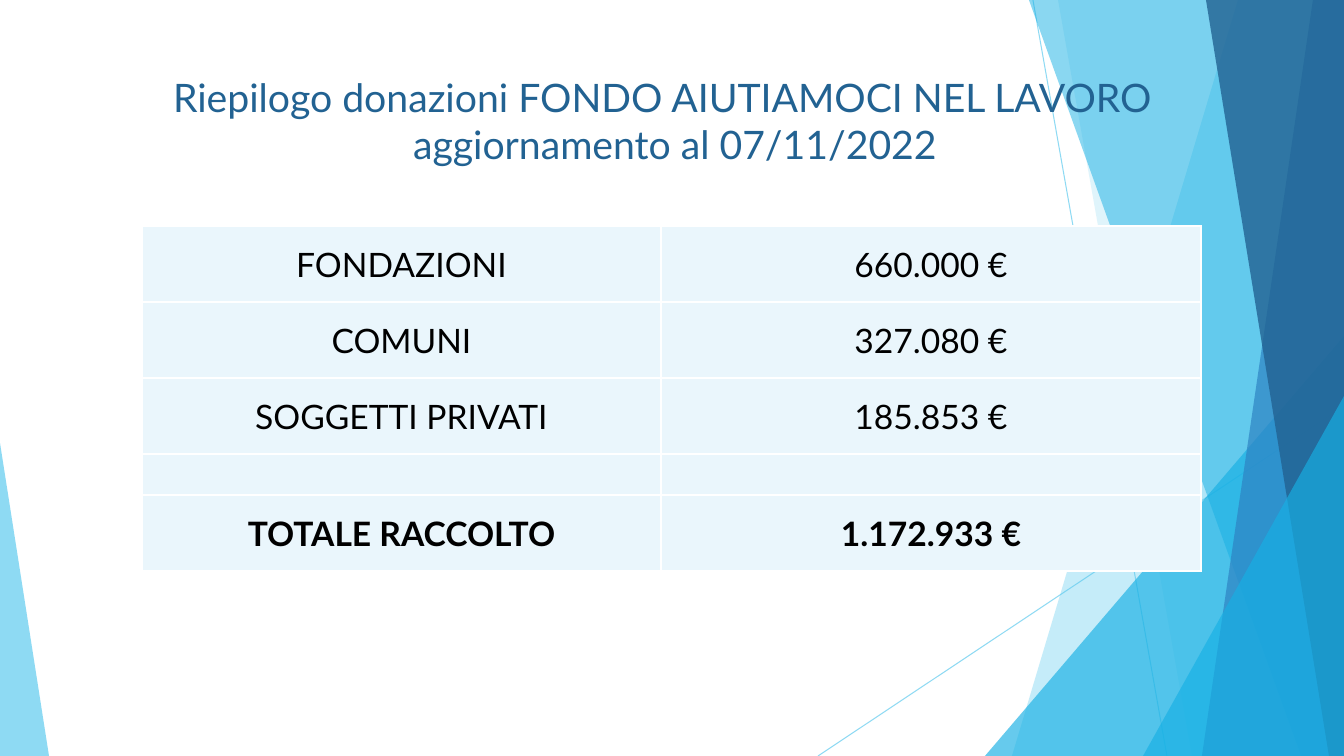
import pptx
import pptx.util
import pptx.dml.color
import pptx.enum.shapes
import pptx.enum.text
import pptx.oxml
import pptx.oxml.ns

RGB = pptx.dml.color.RGBColor
SKY = RGB(0x5F, 0xCB, 0xEF)
CYAN = RGB(0x17, 0xB0, 0xE4)
BLUE = RGB(0x2E, 0x83, 0xC3)
NAVY = RGB(0x22, 0x62, 0x92)
PALE = RGB(0xEA, 0xF6, 0xFC)
WHITE = RGB(0xFF, 0xFF, 0xFF)
BLACK = RGB(0x00, 0x00, 0x00)
WIDTH, HEIGHT = 1344, 756
EMU_PER_PX = 914400 / 100.8
FONT = "Lato"


def px(n):
    return pptx.util.Emu(round(n * EMU_PER_PX))


class Deck:
    def __init__(self):
        self.prs = pptx.Presentation()
        self.prs.slide_width, self.prs.slide_height = px(WIDTH), px(HEIGHT)
        self.s = self.prs.slides.add_slide(self.prs.slide_layouts[5])

    def opacity(self, fill, percent):
        clr = fill._xPr.find(".//" + pptx.oxml.ns.qn("a:srgbClr"))
        alpha = pptx.oxml.parse_xml(
            f'<a:alpha {pptx.oxml.ns.nsdecls("a")} val="{percent * 1000}"/>')
        clr.append(alpha)

    def paint(self, sp, color, percent):
        sp.shadow.inherit = False
        sp.fill.solid()
        sp.fill.fore_color.rgb = color
        self.opacity(sp.fill, percent)
        sp.line.fill.background()

    def line(self, x1, y1, x2, y2):
        c = self.s.shapes.add_connector(
            pptx.enum.shapes.MSO_CONNECTOR.STRAIGHT, px(x1), px(y1), px(x2), px(y2))
        c.line.color.rgb = SKY
        c.line.width = pptx.util.Pt(0.75)
        self.opacity(c.line.fill, 70)
        c._element.spPr.append(pptx.oxml.parse_xml(
            f'<a:effectLst {pptx.oxml.ns.nsdecls("a")}/>'))

    def band(self, top_x, bottom_x, color, percent):
        """Full-height band from a slanted left edge to the slide's right edge."""
        fb = self.s.shapes.build_freeform(top_x, 0, scale=EMU_PER_PX)
        fb.add_line_segments([(WIDTH, 0), (WIDTH, HEIGHT), (bottom_x, HEIGHT)], close=True)
        self.paint(fb.convert_to_shape(), color, percent)

    def corner(self, x, y, w, apex, color, percent):
        """Triangle standing on the slide's bottom edge."""
        sp = self.s.shapes.add_shape(
            pptx.enum.shapes.MSO_SHAPE.ISOSCELES_TRIANGLE, px(x), px(y), px(w), px(HEIGHT - y))
        sp.adjustments[0] = apex
        self.paint(sp, color, percent)

    def run(self, p, text, size, color, bold=False):
        r = p.add_run()
        r.text = text
        r.font.name, r.font.size = FONT, pptx.util.Pt(size)
        r.font.bold, r.font.color.rgb = bold, color

    def title(self, x, y, w, h, lines):
        sp = self.s.shapes.title
        self.s.shapes.element.append(sp.element)  # bring in front of the bands
        sp.left, sp.top, sp.width, sp.height = px(x), px(y), px(w), px(h)
        tf = sp.text_frame
        tf.word_wrap = True
        tf.auto_size = pptx.enum.text.MSO_AUTO_SIZE.NONE
        tf.vertical_anchor = pptx.enum.text.MSO_ANCHOR.TOP
        for i, (text, indent) in enumerate(lines):
            p = tf.add_paragraph() if i else tf.paragraphs[0]
            p.alignment = pptx.enum.text.PP_ALIGN.LEFT
            p._p.get_or_add_pPr().set("marL", str(px(indent)))
            self.run(p, text, 28, NAVY)

    def borders(self, cell):
        tcPr = cell._tc.get_or_add_tcPr()
        for i, side in enumerate(("lnL", "lnR", "lnT", "lnB")):
            tcPr.insert(i, pptx.oxml.parse_xml(
                f'<a:{side} {pptx.oxml.ns.nsdecls("a")} w="12700"><a:solidFill>'
                f'<a:srgbClr val="{WHITE}"/></a:solidFill></a:{side}>'))

    def table(self, x, y, cols, heights, rows):
        tbl = self.s.shapes.add_table(
            len(rows), len(cols), px(x), px(y), px(sum(cols)), px(sum(heights))).table
        tbl.first_row = tbl.horz_banding = False
        for col, w in zip(tbl.columns, cols):
            col.width = px(w)
        for row, h, texts in zip(tbl.rows, heights, rows):
            row.height = px(h)
            for cell, text in zip(row.cells, texts):
                cell.fill.solid()
                cell.fill.fore_color.rgb = PALE
                self.borders(cell)
                cell.margin_left = cell.margin_right = cell.margin_top = px(1)
                cell.margin_bottom = 0
                cell.vertical_anchor = pptx.enum.text.MSO_ANCHOR.MIDDLE
                p = cell.text_frame.paragraphs[0]
                p.alignment = pptx.enum.text.PP_ALIGN.CENTER
                if text:
                    self.run(p, text, 24, BLACK, bold=texts is rows[-1])


def main():
    d = Deck()

    # Background facets
    d.line(1033, 0, 1167, HEIGHT)
    d.line(WIDTH, 406, 818, HEIGHT)
    d.band(1238, 1012, SKY, 36)
    d.band(1058, 1192, SKY, 20)
    d.corner(985, 336, 359, 1, CYAN, 66)
    d.band(1029, 1301, CYAN, 50)
    d.band(1313, 1202, BLUE, 70)
    d.band(1206, 1329, NAVY, 80)
    d.corner(1143, 396, 201, 1, CYAN, 66)
    d.corner(0, 443, 49, 0, SKY, 70)

    # Title
    d.title(163, 68, 1017, 105, [
        ("Riepilogo donazioni FONDO AIUTIAMOCI NEL LAVORO", 0),
        ("aggiornamento al 07/11/2022", 240),
    ])

    # Donations table
    d.table(142, 226, [519, 540], [76, 76, 76, 41, 76], [
        ("FONDAZIONI", "660.000 €"),
        ("COMUNI", "327.080 €"),
        ("SOGGETTI PRIVATI", "185.853 €"),
        ("", ""),
        ("TOTALE RACCOLTO", "1.172.933 €"),
    ])

    d.prs.save("out.pptx")


if __name__ == "__main__":
    main()
